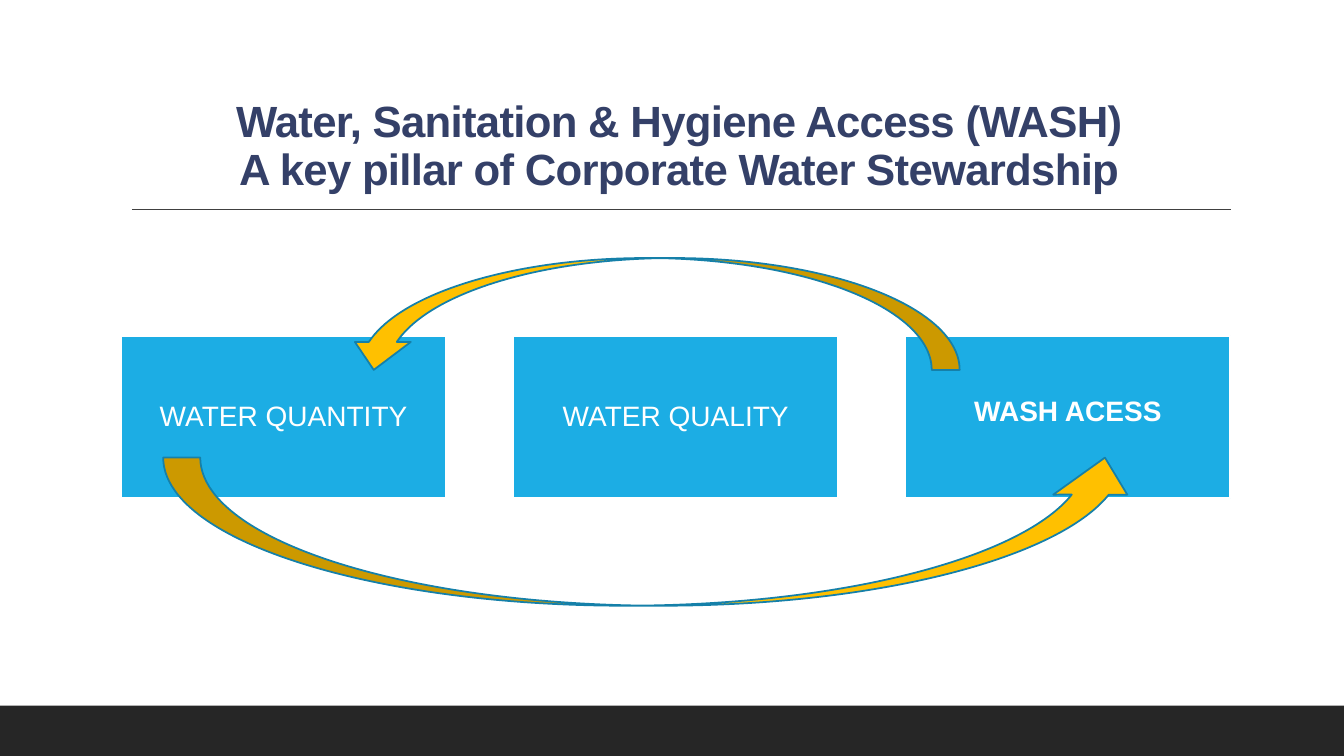
import pptx
import pptx.dml.color
import pptx.enum.shapes
import pptx.enum.text
import pptx.oxml
import pptx.util

Pt = pptx.util.Pt
SHAPE = pptx.enum.shapes.MSO_SHAPE
ANCHOR = pptx.enum.text.MSO_ANCHOR

TITLE = ["Water, Sanitation & Hygiene Access (WASH)",
         "A key pillar of Corporate Water Stewardship"]
# label, bold, bottom inset
PILLARS = [("WATER QUANTITY", False, 0.7),
           ("WATER QUALITY", False, 0.7),
           ("WASH ACESS", True, 8)]
# preset, (left, top, width, height), mirrored
ARROWS = [(SHAPE.CURVED_UP_ARROW, (116.6, 326.9, 699.1, 105.8), False),
          (SHAPE.CURVED_DOWN_ARROW, (247, 184.3, 438.5, 79.9), True)]

SLIDE_W, SLIDE_H, FOOTER_H = 960, 540, 36
PILLAR_LEFT, PILLAR_TOP, PILLAR_W, PILLAR_H = 86.6, 240, 232, 116
PILLAR_PITCH = 280.1
WHITE, BLUE, NAVY = "FFFFFF", "1CADE4", "344068"
GOLD, TEAL, CHARCOAL, GREY = "FFC000", "1580A9", "262626", "404040"


def colour(code):
    return pptx.dml.color.RGBColor.from_string(code)


def write(shape, lines, size, ink, bold=False, anchor=ANCHOR.MIDDLE, inset=None,
          bottom_inset=None, tracking=None):
    """Fill a shape with centred paragraphs; tracking is in points."""
    frame = shape.text_frame
    frame.text = "\n".join(lines)
    frame.word_wrap = True
    frame.auto_size = pptx.enum.text.MSO_AUTO_SIZE.NONE
    frame.vertical_anchor = anchor
    if inset is not None:
        frame.margin_left = frame.margin_right = frame.margin_top = Pt(inset)
    if bottom_inset is not None:
        frame.margin_bottom = Pt(bottom_inset)
    for paragraph in frame.paragraphs:
        paragraph.alignment = pptx.enum.text.PP_ALIGN.CENTER
        paragraph.line_spacing = 0.9
        paragraph.space_before = Pt(0)
        for run in paragraph.runs:
            run.font.name = "Arial"
            run.font.size = Pt(size)
            run.font.bold = bold
            run.font.color.rgb = colour(ink)
            if tracking is not None:
                run.font._element.set("spc", str(round(tracking * 100)))


def add_shape(slide, preset, box, fill, line=None):
    shape = slide.shapes.add_shape(preset, *map(Pt, box))
    shape.shadow.inherit = False
    shape.fill.solid()
    shape.fill.fore_color.rgb = colour(fill)
    if line:
        shape.line.color.rgb = colour(line)
        shape.line.width = Pt(1.25)
    else:
        shape.line.fill.background()
    return shape


def add_rule(slide, left, right, y):
    rule = slide.shapes.add_connector(
        pptx.enum.shapes.MSO_CONNECTOR.STRAIGHT, Pt(left), Pt(y), Pt(right), Pt(y))
    rule.line.color.rgb = colour(GREY)
    rule.line.width = Pt(1)
    rule._element.spPr.append(pptx.oxml.parse_xml(
        '<a:effectLst xmlns:a="http://schemas.openxmlformats.org/drawingml/2006/main"/>'))


def main():
    deck = pptx.Presentation()
    deck.slide_width, deck.slide_height = Pt(SLIDE_W), Pt(SLIDE_H)
    slide = deck.slides.add_slide(deck.slide_layouts[5])

    title = slide.shapes.title
    title.left, title.top, title.width, title.height = map(Pt, (91.4, 20.2, 787, 122.4))
    write(title, TITLE, 31.2, NAVY, bold=True, anchor=ANCHOR.BOTTOM, tracking=-0.5)

    add_shape(slide, SHAPE.RECTANGLE,
              (0, SLIDE_H - FOOTER_H, SLIDE_W, FOOTER_H), CHARCOAL)
    add_rule(slide, 94.3, 879.1, 149.5)

    for index, (label, bold, bottom_inset) in enumerate(PILLARS):
        left = PILLAR_LEFT + index * PILLAR_PITCH
        pillar = add_shape(slide, SHAPE.RECTANGLE,
                           (left, PILLAR_TOP, PILLAR_W, PILLAR_H), BLUE, WHITE)
        write(pillar, [label], 20, WHITE, bold=bold, inset=0.7,
              bottom_inset=bottom_inset)

    for preset, box, mirrored in ARROWS:
        arrow = add_shape(slide, preset, box, GOLD, TEAL)
        if mirrored:
            arrow._element.spPr.get_or_add_xfrm().set("flipH", "1")

    deck.save("out.pptx")


if __name__ == "__main__":
    main()
